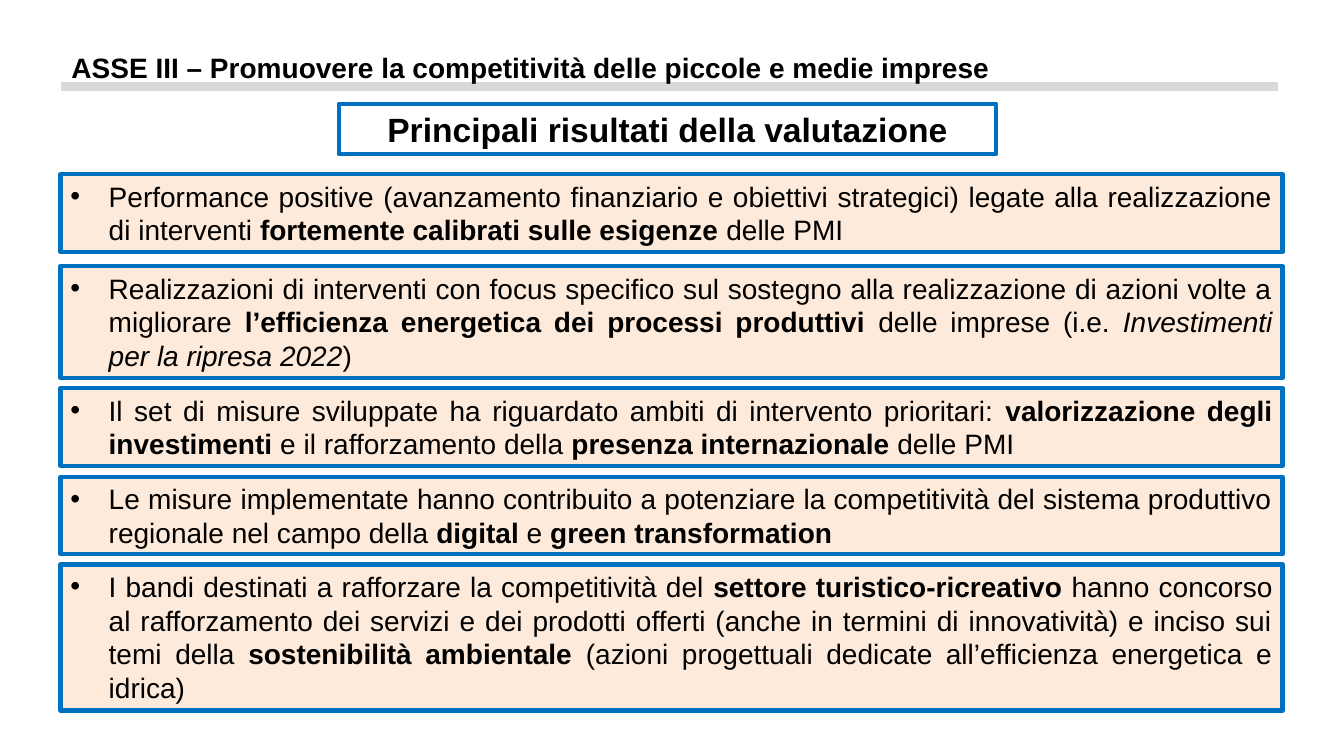
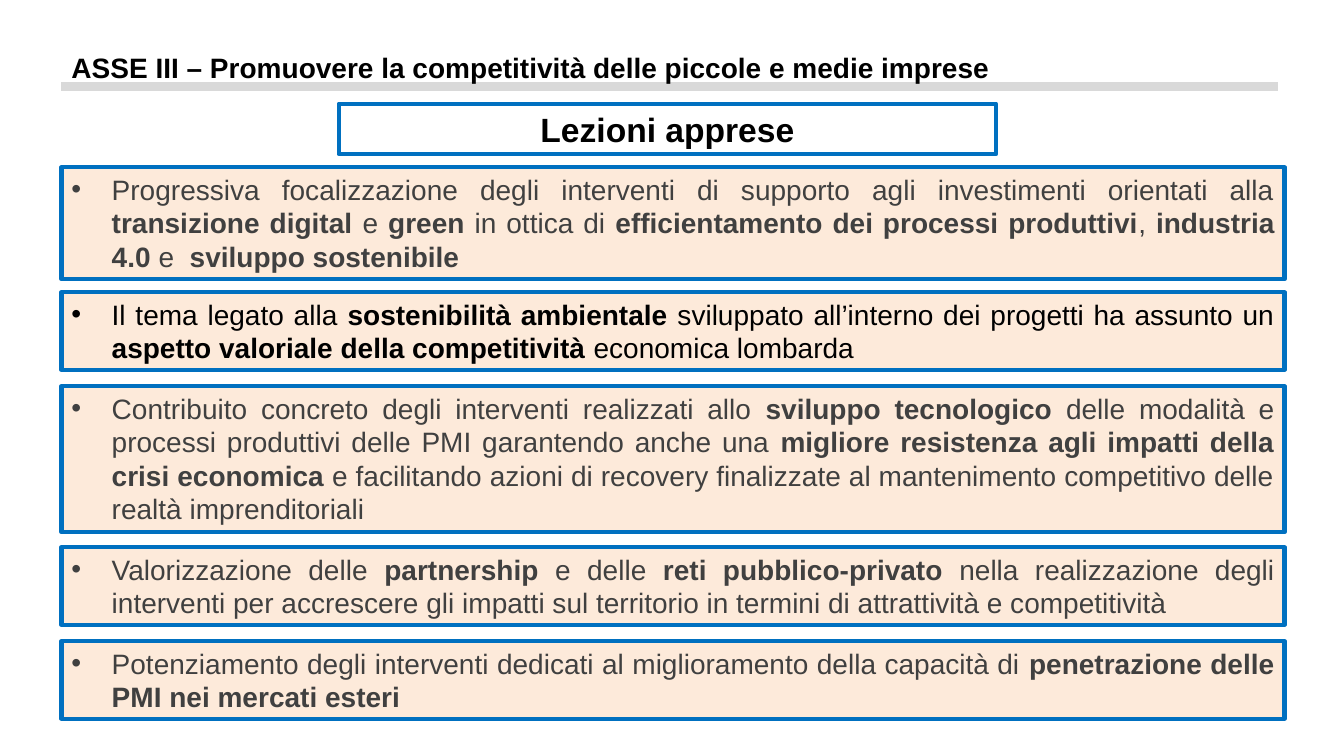
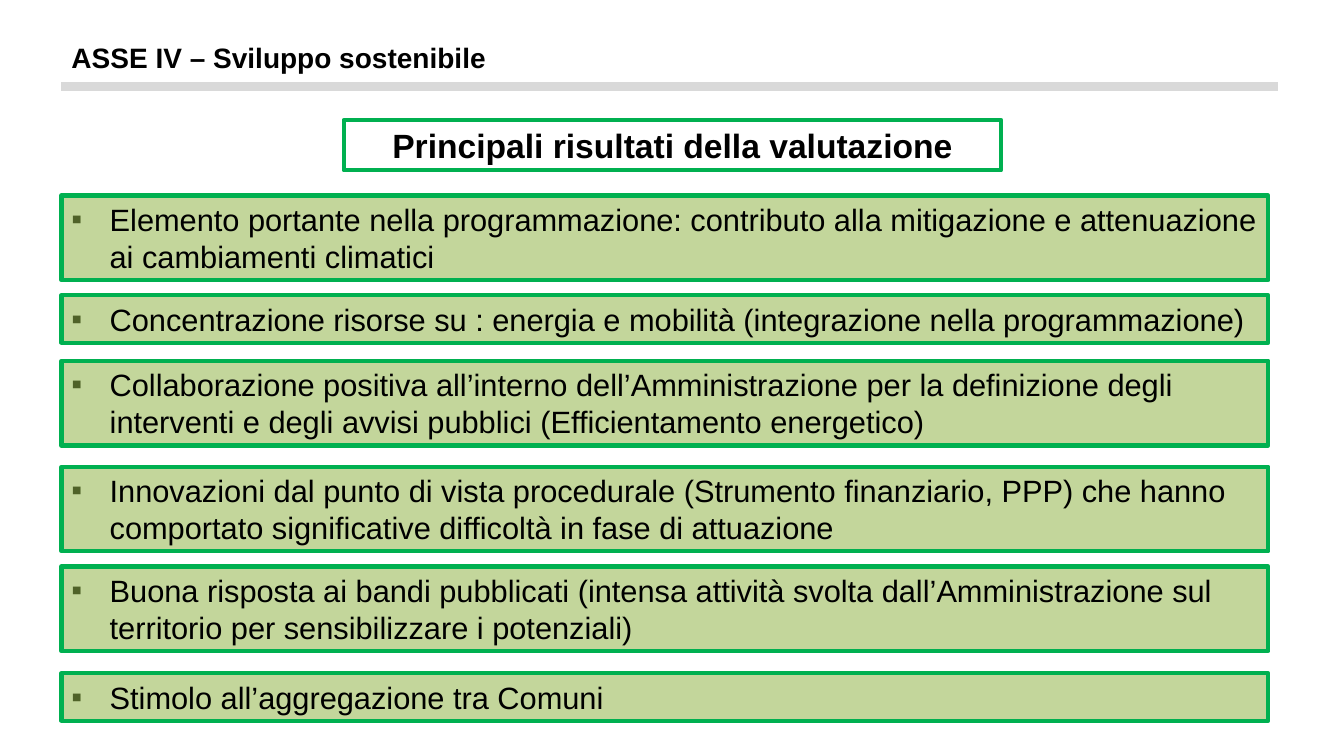
from dataclasses import dataclass

from lxml import etree
from pptx import Presentation
from pptx.dml.color import RGBColor
from pptx.enum import shapes, text
from pptx.oxml.ns import qn
from pptx.util import Emu, Pt

PX = 9144  # 100 px to the inch
FONT = "Arial"
TITLE_SIZE, HEADING_SIZE = 20, 24
LEFT = 61

COLORS = {
    "black": "000000",
    "gray": "404040",
    "rule": "D9D9D9",
    "white": "FFFFFF",
    "blue": "0070C0",
    "peach": "FDEADA",
    "green": "00B050",
    "sage": "C3D69B",
    "olive": "4F6228",
}


@dataclass(frozen=True)
class Style:
    border: str
    fill: str
    bullet: str
    bullet_color: str | None
    size: int
    space_after: int
    line_height: int
    padding: int
    align: text.PP_ALIGN


@dataclass(frozen=True)
class Point:
    top: int
    lines: int
    words: str  # *bold* and _italic_
    color: str = "black"


@dataclass(frozen=True)
class Page:
    title: str
    title_top: int
    heading: str
    heading_left: int
    heading_top: int
    box_left: int
    box_width: int
    indent: int
    style: Style
    points: tuple[Point, ...]


COMPETITIVENESS = Style("blue", "peach", "•", None, 20, 3, 34, 9, text.PP_ALIGN.JUSTIFY)
SUSTAINABILITY = Style("green", "sage", "▪", "olive", 22, 6, 37, 10, text.PP_ALIGN.LEFT)

AXIS_3 = "ASSE III – Promuovere la competitività delle piccole e medie imprese"
AXIS_4 = "ASSE IV – Sviluppo sostenibile"
RESULTS = "Principali risultati della valutazione"

PAGES = (
    Page(AXIS_3, 45, RESULTS, 336, 103, 60, 1212, 38, COMPETITIVENESS, (
        Point(173, 2, "Performance positive (avanzamento finanziario e obiettivi strategici) legate "
              "alla realizzazione di interventi *fortemente calibrati sulle esigenze *delle PMI"),
        Point(264, 3, "Realizzazioni di interventi con focus specifico sul sostegno alla "
              "realizzazione di azioni volte a migliorare *l’efficienza energetica dei processi "
              "produttivi *delle imprese (i.e. _Investimenti per la ripresa 2022_)"),
        Point(385, 2, "Il set di misure sviluppate ha riguardato ambiti di intervento prioritari: "
              "*valorizzazione degli investimenti* e il rafforzamento della "
              "*presenza internazionale *delle PMI"),
        Point(473, 2, "Le misure implementate hanno contribuito a potenziare la competitività del "
              "sistema produttivo regionale nel campo della *digital* e *green transformation*"),
        Point(560, 4, "I bandi destinati a rafforzare la competitività del *settore "
              "turistico-ricreativo *hanno concorso al rafforzamento dei servizi e dei prodotti "
              "offerti (anche in termini di innovatività) e inciso sui temi della *sostenibilità "
              "ambientale* (azioni progettuali dedicate all’efficienza energetica e idrica)"),
    )),
    Page(AXIS_3, 45, "Lezioni apprese", 336, 103, 61, 1213, 40, COMPETITIVENESS, (
        Point(166, 3, "Progressiva focalizzazione degli interventi di supporto agli investimenti "
              "orientati alla *transizione digital *e *green* in ottica di *efficientamento dei "
              "processi produttivi*, *industria 4.0 *e  *sviluppo sostenibile*", "gray"),
        Point(290, 2, "Il tema legato alla *sostenibilità ambientale* sviluppato all’interno dei "
              "progetti ha assunto un *aspetto valoriale della competitività *economica lombarda"),
        Point(383, 4, "Contribuito concreto degli interventi realizzati allo *sviluppo tecnologico "
              "*delle modalità e processi produttivi delle PMI garantendo anche una *migliore "
              "resistenza agli impatti della crisi economica *e facilitando azioni di recovery "
              "finalizzate al mantenimento competitivo delle realtà imprenditoriali", "gray"),
        Point(543, 2, "Valorizzazione delle *partnership* e delle *reti pubblico-privato *nella "
              "realizzazione degli interventi per accrescere gli impatti sul territorio in termini "
              "di attrattività e competitività", "gray"),
        Point(636, 2, "Potenziamento degli interventi dedicati al miglioramento della capacità di "
              "*penetrazione delle PMI nei mercati esteri*", "gray"),
    )),
    Page(AXIS_4, 35, RESULTS, 341, 119, 61, 1197, 38, SUSTAINABILITY, (
        Point(194, 2, "Elemento portante nella programmazione: contributo alla mitigazione e "
              "attenuazione ai cambiamenti climatici"),
        Point(293, 1, "Concentrazione risorse su : energia e mobilità "
              "(integrazione nella programmazione)"),
        Point(358, 2, "Collaborazione positiva all’interno dell’Amministrazione per la definizione "
              "degli interventi e degli avvisi pubblici (Efficientamento energetico)"),
        Point(463, 2, "Innovazioni dal punto di vista procedurale (Strumento finanziario, PPP) che "
              "hanno comportato significative difficoltà in fase di attuazione"),
        Point(562, 2, "Buona risposta ai bandi pubblicati (intensa attività svolta "
              "dall’Amministrazione sul territorio per sensibilizzare i potenziali)"),
        Point(668, 1, "Stimolo all’aggregazione tra Comuni"),
    )),
)


def px(length: int) -> Emu:
    return Emu(length * PX)


def rgb(name: str) -> RGBColor:
    return RGBColor.from_string(COLORS[name])


def set_font(paragraph, size: int, color: str = "black", bold: bool | None = None) -> None:
    font = paragraph.font
    font.name, font.size, font.bold = FONT, Pt(size), bold
    font.color.rgb = rgb(color)


def add_bullet(paragraph, style: Style, indent: int) -> None:
    properties = paragraph._p.get_or_add_pPr()
    properties.set("marL", str(px(indent)))
    properties.set("indent", str(-px(indent)))
    if style.bullet_color:
        color = etree.SubElement(properties, qn("a:buClr"))
        etree.SubElement(color, qn("a:srgbClr"), val=COLORS[style.bullet_color])
    etree.SubElement(properties, qn("a:buFont"), typeface=FONT)
    etree.SubElement(properties, qn("a:buChar"), char=style.bullet)


def add_marked_runs(paragraph, words: str) -> None:
    for i, part in enumerate(words.split("*")):
        for j, piece in enumerate(part.split("_")):
            if piece:
                run = paragraph.add_run()
                run.text = piece
                run.font.bold = True if i % 2 else None
                run.font.italic = True if j % 2 else None


def add_box(slide, left: int, top: int, width: int, height: int, fill: str, border: str):
    """Draw a bordered rectangle and return its first paragraph."""
    shape = slide.shapes.add_shape(
        shapes.MSO_SHAPE.RECTANGLE, px(left), px(top), px(width), px(height))
    shape.shadow.inherit = False
    shape.fill.solid()
    shape.fill.fore_color.rgb = rgb(fill)
    shape.line.color.rgb = rgb(border)
    shape.line.width = Pt(3)
    frame = shape.text_frame
    frame.word_wrap = True
    frame.auto_size = text.MSO_AUTO_SIZE.SHAPE_TO_FIT_TEXT
    frame.vertical_anchor = text.MSO_ANCHOR.TOP
    return frame.paragraphs[0]


def add_header(slide, page: Page) -> None:
    # Grey rule
    rule = slide.shapes.add_connector(
        shapes.MSO_CONNECTOR.STRAIGHT, px(LEFT), px(86), px(1268), px(86))
    rule.line.color.rgb = rgb("rule")
    rule.line.width = Pt(6)
    etree.SubElement(rule._element.spPr, qn("a:effectLst"))

    # Title
    title = slide.shapes.add_textbox(px(LEFT), px(page.title_top), px(1211), px(44))
    title.text_frame.word_wrap = True
    paragraph = title.text_frame.paragraphs[0]
    paragraph.text = page.title
    set_font(paragraph, TITLE_SIZE, bold=True)

    # Heading box
    paragraph = add_box(slide, page.heading_left, page.heading_top, 652, 50,
                        "white", page.style.border)
    paragraph.text = page.heading
    paragraph.alignment = text.PP_ALIGN.CENTER
    set_font(paragraph, HEADING_SIZE, bold=True)


def add_point(slide, page: Page, point: Point) -> None:
    style = page.style
    height = style.line_height * point.lines + style.padding
    paragraph = add_box(slide, page.box_left, point.top, page.box_width, height,
                        style.fill, style.border)
    add_bullet(paragraph, style, page.indent)
    paragraph.alignment = style.align
    paragraph.space_after = Pt(style.space_after)
    set_font(paragraph, style.size, point.color)
    add_marked_runs(paragraph, point.words)


def main() -> None:
    presentation = Presentation()
    presentation.slide_width, presentation.slide_height = px(1333), px(750)
    blank = presentation.slide_layouts[6]
    for page in PAGES:
        slide = presentation.slides.add_slide(blank)
        add_header(slide, page)
        for point in page.points:
            add_point(slide, page, point)
    presentation.save("out.pptx")


if __name__ == "__main__":
    main()
